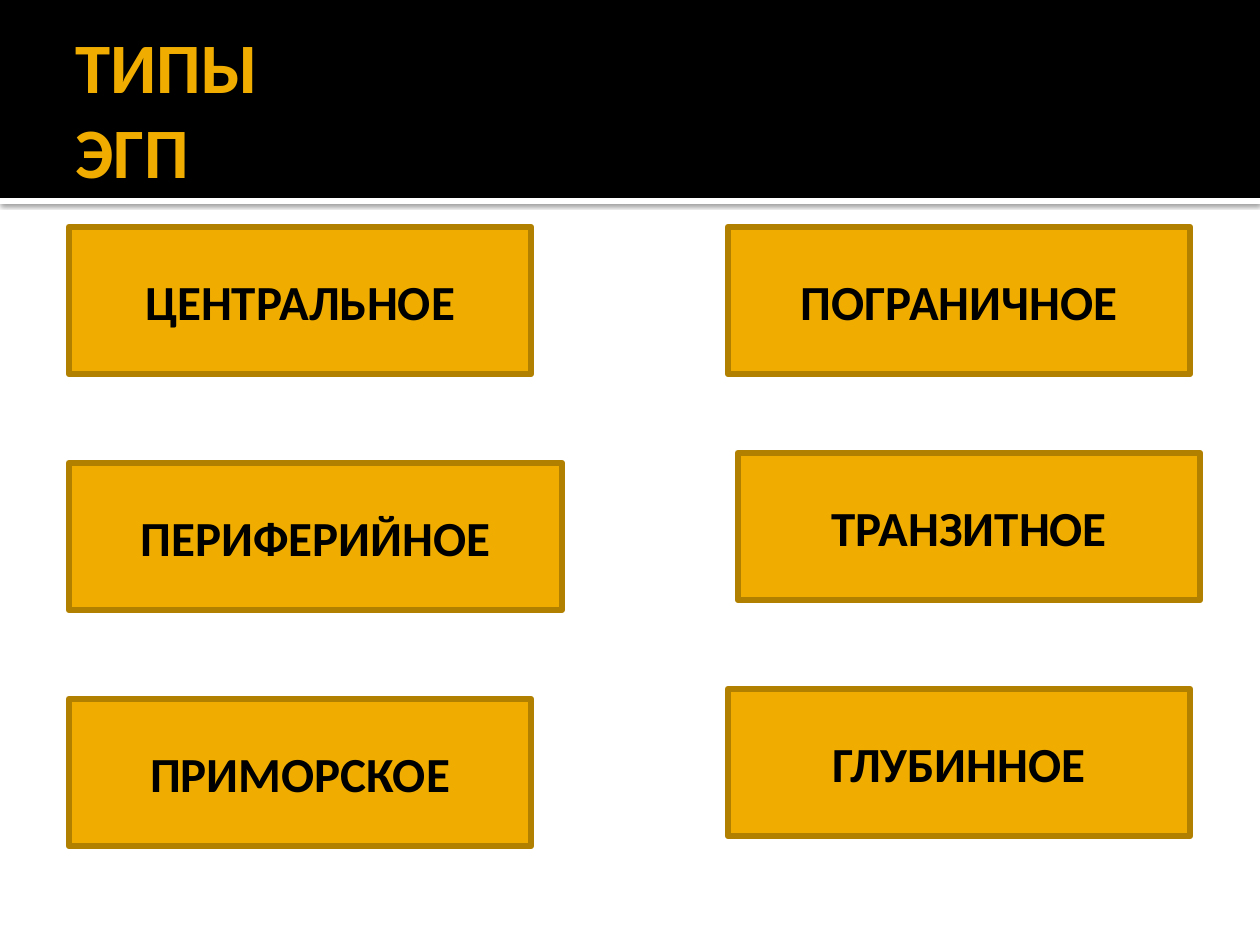
import pptx
import pptx.util
import pptx.dml.color
import pptx.enum.shapes
import pptx.enum.text
import lxml.etree

RGB = pptx.dml.color.RGBColor
BLACK = RGB(0x00, 0x00, 0x00)
WHITE = RGB(0xFF, 0xFF, 0xFF)
GOLD = RGB(0xF0, 0xAD, 0x00)
BROWN = RGB(0xB2, 0x80, 0x00)
FONT = "Calibri"
SCALE = 914400 / 126


def px(num):
    return pptx.util.Emu(round(num * SCALE))


def add_rect(left, top, width, height, fill):
    rect = slide.shapes.add_shape(
        pptx.enum.shapes.MSO_SHAPE.RECTANGLE,
        px(left), px(top), px(width), px(height))
    rect.shadow.inherit = False
    rect.fill.solid()
    rect.fill.fore_color.rgb = fill
    rect.line.fill.background()
    return rect


deck = pptx.Presentation()
deck.slide_width = px(1260)
deck.slide_height = px(945)
slide = deck.slides.add_slide(deck.slide_layouts[5])

strip = add_rect(0, 198, 1260, 6, WHITE)
effect = strip.element.spPr.find(pptx.oxml.ns.qn("a:effectLst"))
effect.append(lxml.etree.fromstring(
    '<a:outerShdw xmlns:a="http://schemas.openxmlformats.org/drawingml/2006/main"'
    ' blurRad="31750" dist="10160" dir="5400000" algn="tl" rotWithShape="0">'
    '<a:srgbClr val="000000"><a:alpha val="60000"/></a:srgbClr></a:outerShdw>'))
add_rect(0, 0, 1260, 198, BLACK)

title = slide.shapes.title
title.element.getparent().append(title.element)
title.left, title.top, title.width, title.height = px(63), px(21), px(1134), px(173)
frame = title.text_frame
frame.text = "ТИПЫ\vЭГП"
frame.auto_size = pptx.enum.text.MSO_AUTO_SIZE.NONE
frame.vertical_anchor = pptx.enum.text.MSO_ANCHOR.MIDDLE
frame.margin_left = pptx.util.Inches(0.1)
frame.margin_right = frame.margin_top = frame.margin_bottom = pptx.util.Inches(0.05)
para = frame.paragraphs[0]
para.alignment = pptx.enum.text.PP_ALIGN.LEFT
for run in para.runs:
    run.font.name = FONT
    run.font.size = pptx.util.Pt(40.5)
    run.font.bold = True
    run.font.color.rgb = GOLD

TYPES = [
    ("ЦЕНТРАЛЬНОЕ", 69, 227, 462),
    ("ПЕРИФЕРИЙНОЕ", 69, 463, 493),
    ("ПРИМОРСКОЕ", 69, 699, 462),
    ("ГЛУБИННОЕ", 728, 689, 462),
    ("ТРАНЗИТНОЕ", 738, 453, 462),
    ("ПОГРАНИЧНОЕ", 728, 227, 462),
]
for name, left, top, width in TYPES:
    box = add_rect(left, top, width, 147, GOLD)
    box.line.color.rgb = BROWN
    box.line.width = pptx.util.Pt(3.78)
    frame = box.text_frame
    frame.text = name
    frame.word_wrap = True
    frame.vertical_anchor = pptx.enum.text.MSO_ANCHOR.MIDDLE
    para = frame.paragraphs[0]
    para.alignment = pptx.enum.text.PP_ALIGN.CENTER
    font = para.runs[0].font
    font.name = FONT
    font.size = pptx.util.Pt(28)
    font.bold = True
    font.color.rgb = BLACK

deck.save("out.pptx")
